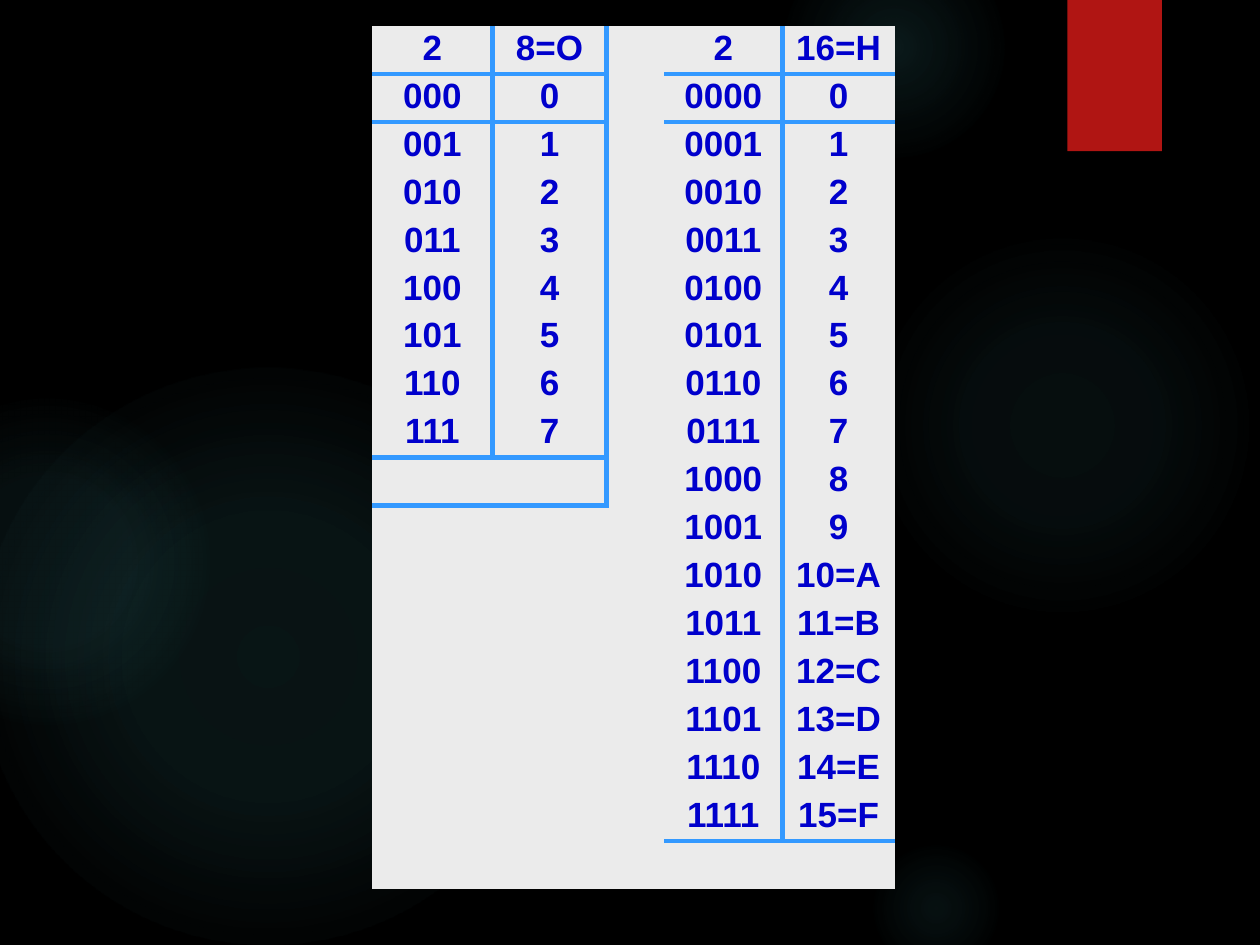
from lxml import etree
from pptx import Presentation
from pptx.dml.color import RGBColor
from pptx.enum.shapes import MSO_SHAPE
from pptx.enum.text import PP_ALIGN
from pptx.oxml import parse_xml
from pptx.oxml.ns import qn
from pptx.util import Pt

OVAL, RECT = MSO_SHAPE.OVAL, MSO_SHAPE.RECTANGLE
CENTER = PP_ALIGN.CENTER
NS = 'xmlns:a="http://schemas.openxmlformats.org/drawingml/2006/main"'
NO_STYLE = "{2D5ABB26-0587-4C30-8999-92F81FD0307C}"
COLORS = {"back": "000000", "glow": "50B9C1", "tab": "B01513",
          "cell": "EBEBEB", "text": "0000CC", "rule": "3399FF"}

GLOWS = [
    (496, 132, 222, [(0, 7), (36, 6), (69, 0)]),
    (448, -36, 126, [(0, 14), (36, 7), (73, 0)]),
    (496, 480, 78, [(0, 9), (36, 5), (66, 0)]),
    (-12, 210, 330, [(0, 11), (36, 10), (75, 0)]),
    (-66, 228, 186, [(0, 8), (36, 8), (72, 0)]),
]
COL_WIDTHS = [69.1, 64.8, 33.1, 67.7, 64.1]
ROW_HEIGHT = 27.4
ROWS = 18
GAP_ROWS = 10


def rgb(name):
    return RGBColor.from_string(COLORS[name])


def add_shape(s, kind, left, top, width, height):
    sp = s.shapes.add_shape(kind, Pt(left), Pt(top), Pt(width), Pt(height))
    sp.shadow.inherit = False
    sp.line.fill.background()
    return sp


def add_glow(s, left, top, size, stops):
    sp = add_shape(s, OVAL, left, top, size, size)
    stop_xml = "".join(
        f'<a:gs pos="{pos * 1000}"><a:srgbClr val="{COLORS["glow"]}">'
        f'<a:alpha val="{alpha * 1000}"/></a:srgbClr></a:gs>'
        for pos, alpha in stops)
    grad = parse_xml(
        f'<a:gradFill {NS}><a:gsLst>{stop_xml}</a:gsLst><a:path path="circle">'
        '<a:fillToRect l="50000" t="50000" r="50000" b="50000"/>'
        '</a:path></a:gradFill>')
    sp._element.spPr.find(qn("a:prstGeom")).addnext(grad)


def add_tab(s):
    sp = add_shape(s, RECT, 610, 0, 54, 86.4)
    sp.fill.solid()
    sp.fill.fore_color.rgb = rgb("tab")
    effects = sp._element.spPr.find(qn("a:effectLst"))
    effects.append(parse_xml(
        f'<a:outerShdw {NS} blurRad="{Pt(3)}" dist="{Pt(2)}" dir="5400000" rotWithShape="0">'
        f'<a:srgbClr val="{COLORS["back"]}"><a:alpha val="45000"/></a:srgbClr>'
        '</a:outerShdw>'))


def add_borders(cell, sides):
    tcPr = cell._tc.get_or_add_tcPr()
    for side in "LRTB":
        if side in sides:
            tcPr.append(parse_xml(
                f'<a:ln{side} {NS} w="{Pt(3)}"><a:solidFill>'
                f'<a:srgbClr val="{COLORS["rule"]}"/></a:solidFill></a:ln{side}>'))


def style_cell(cell, sides=""):
    add_borders(cell, sides)
    cell.fill.solid()
    cell.fill.fore_color.rgb = rgb("cell")
    cell.margin_left = cell.margin_right = Pt(2.88)
    cell.margin_top = cell.margin_bottom = Pt(1.44)


def write_cell(cell, text):
    p = cell.text_frame.paragraphs[0]
    p.text = text
    p.alignment = CENTER
    before = etree.SubElement(p._p.get_or_add_pPr(), qn("a:spcBef"))
    etree.SubElement(before, qn("a:spcPct")).set("val", "20000")
    font = p.runs[0].font
    font.name, font.size, font.bold = "Arial", Pt(20), True
    font.color.rgb = rgb("text")


def code_rows(bits, heading):
    digits = [str(n) if n < 10 else f"{n}={n:X}" for n in range(2 ** bits)]
    return [("2", heading)] + [(f"{n:0{bits}b}", d) for n, d in enumerate(digits)]


def fill_block(table, first_col, rows):
    last = len(rows) - 1
    for i in range(ROWS):
        for j in range(2):
            cell = table.cell(i, first_col + j)
            sides = "RL"[j] if i <= last else ""
            if i in (0, last):
                sides += "B"
            if i in (1, last + 1):
                sides += "T"
            style_cell(cell, sides)
            if i <= last:
                write_cell(cell, rows[i][j])


def add_code_table(s):
    frame = s.shapes.add_table(ROWS, len(COL_WIDTHS), Pt(212.5), Pt(15),
                               Pt(sum(COL_WIDTHS)), Pt(ROWS * ROW_HEIGHT))
    table = frame.table
    table.first_row = table.horz_banding = False
    table._tbl.tblPr.find(qn("a:tableStyleId")).text = NO_STYLE
    for col, width in zip(table.columns, COL_WIDTHS):
        col.width = Pt(width)
    for row in table.rows:
        row.height = Pt(ROW_HEIGHT)
    for i in range(ROWS):
        style_cell(table.cell(i, 2))
    table.cell(0, 2).merge(table.cell(GAP_ROWS - 1, 2))
    fill_block(table, 0, code_rows(3, "8=O"))
    fill_block(table, 3, code_rows(4, "16=H"))


def main():
    prs = Presentation()
    prs.slide_width, prs.slide_height = Pt(720), Pt(540)
    s = prs.slides.add_slide(prs.slide_layouts[6])
    s.background.fill.solid()
    s.background.fill.fore_color.rgb = rgb("back")
    for glow in GLOWS:
        add_glow(s, *glow)
    add_tab(s)
    add_code_table(s)
    prs.save("out.pptx")


if __name__ == "__main__":
    main()
